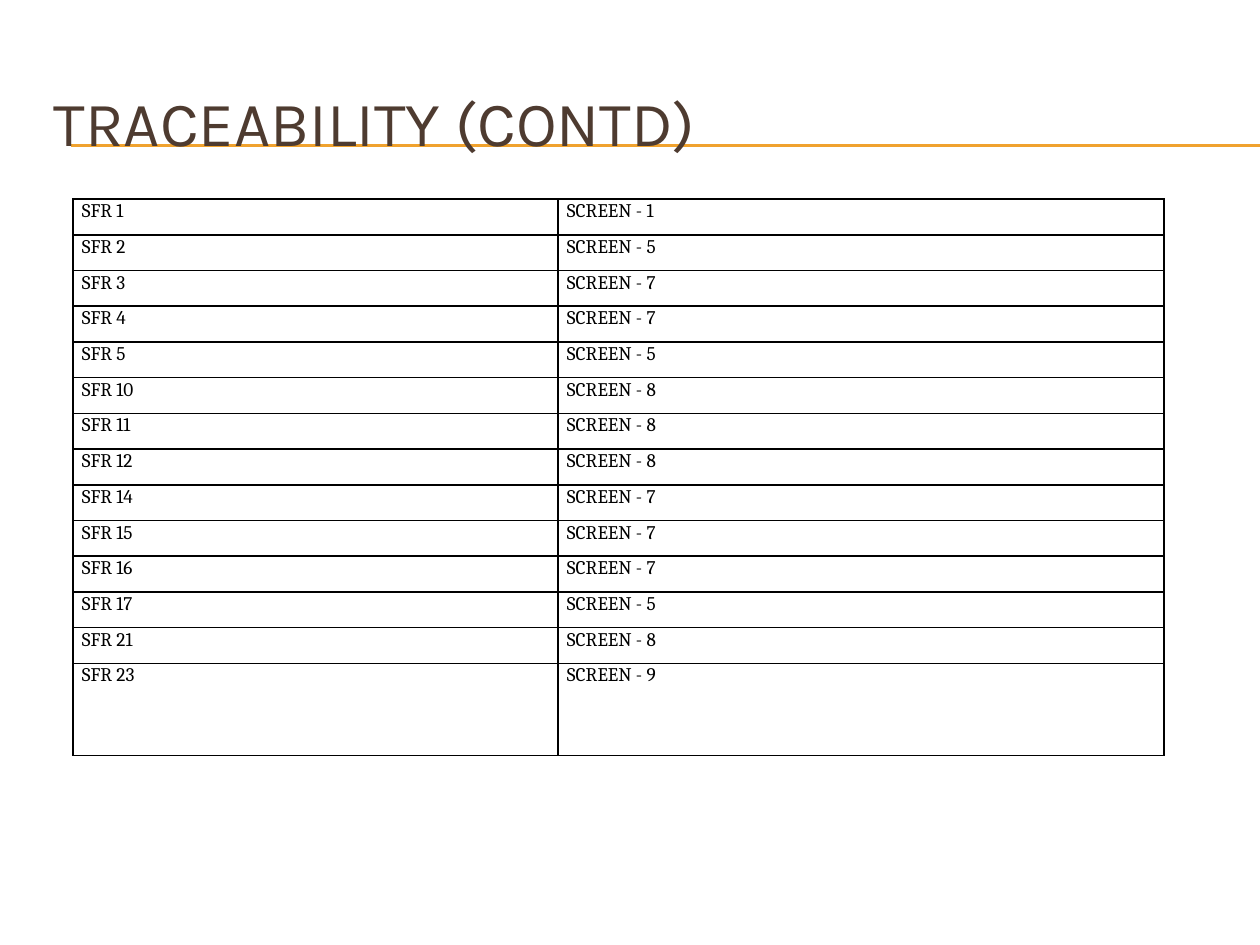
import pptx
import pptx.dml.color
import pptx.enum.shapes
import pptx.enum.text
import pptx.oxml
import pptx.oxml.ns
import pptx.util

RGB = pptx.dml.color.RGBColor
INCH = pptx.util.Inches
GOLD = RGB(0xF0, 0xA2, 0x2E)
BROWN = RGB(0x4E, 0x3B, 0x30)
BLACK = RGB(0, 0, 0)

WIDE, HIGH = 10, 7.5
COLS = (3.85, 4.81)
TALL, LAST = 4.42, 0.73
LINKS = (
    (1, 1), (2, 5), (3, 7), (4, 7), (5, 5), (10, 8), (11, 8),
    (12, 8), (14, 7), (15, 7), (16, 7), (17, 5), (21, 8), (23, 9),
)


def add_run(para, text, font, size, color):
    run = para.add_run()
    run.text = text
    run.font.name = font
    run.font.size = pptx.util.Pt(size)
    run.font.color.rgb = color


def add_rule(slide, top):
    rule = slide.shapes.add_connector(
        pptx.enum.shapes.MSO_CONNECTOR.STRAIGHT,
        INCH(0.56), INCH(top), INCH(WIDE), INCH(top))
    rule.line.color.rgb = GOLD
    rule.line.width = pptx.util.Pt(0.75)
    props = rule.element.find(pptx.oxml.ns.qn("p:spPr"))
    props.append(pptx.oxml.parse_xml(
        f"<a:effectLst {pptx.oxml.ns.nsdecls('a')}/>"))


def add_title(slide, text):
    box = slide.shapes.add_textbox(
        INCH(0.33), INCH(0.5), INCH(9.5), INCH(0.92))
    frame = box.text_frame
    frame.word_wrap = True
    frame.vertical_anchor = pptx.enum.text.MSO_ANCHOR.MIDDLE
    add_run(frame.paragraphs[0], text, "Karla", 36, BROWN)


def add_edges(cell):
    """Draw a 1 pt line on all four sides of a cell."""
    props = cell._tc.get_or_add_tcPr()
    for side in "LRTB":
        props.append(pptx.oxml.parse_xml(
            f"<a:ln{side} {pptx.oxml.ns.nsdecls('a')} w='{pptx.util.Pt(1)}'>"
            f"<a:solidFill><a:srgbClr val='{BLACK}'/></a:solidFill>"
            f"</a:ln{side}>"))


def fill_cell(cell, text):
    add_edges(cell)
    cell.fill.background()
    cell.margin_left = cell.margin_right = INCH(0.07)
    cell.margin_top = cell.margin_bottom = 0
    para = cell.text_frame.paragraphs[0]
    para.line_spacing = 1.05
    para.space_after = pptx.util.Pt(10)
    add_run(para, text, "Cambria", 11, BLACK)


def add_grid(slide, links):
    """Trace each requirement to its screen; the last row is taller."""
    table = slide.shapes.add_table(
        len(links), len(COLS), INCH(0.58), INCH(1.58),
        INCH(sum(COLS)), INCH(TALL)).table
    table.first_row = table.horz_banding = False
    for col, width in zip(table.columns, COLS):
        col.width = INCH(width)
    for row, (need, screen) in zip(table.rows, links):
        row.height = INCH((TALL - LAST) / (len(links) - 1))
        fill_cell(row.cells[0], f"SFR {need}")
        fill_cell(row.cells[1], f"SCREEN - {screen}")
    row.height = INCH(LAST)


def main():
    deck = pptx.Presentation()
    deck.slide_width, deck.slide_height = INCH(WIDE), INCH(HIGH)
    slide = deck.slides.add_slide(deck.slide_layouts[6])
    for top in (1.15, 1.16):
        add_rule(slide, top)
    add_title(slide, "TRACEABILITY (CONTD)")
    add_grid(slide, LINKS)
    deck.save("out.pptx")


if __name__ == "__main__":
    main()
